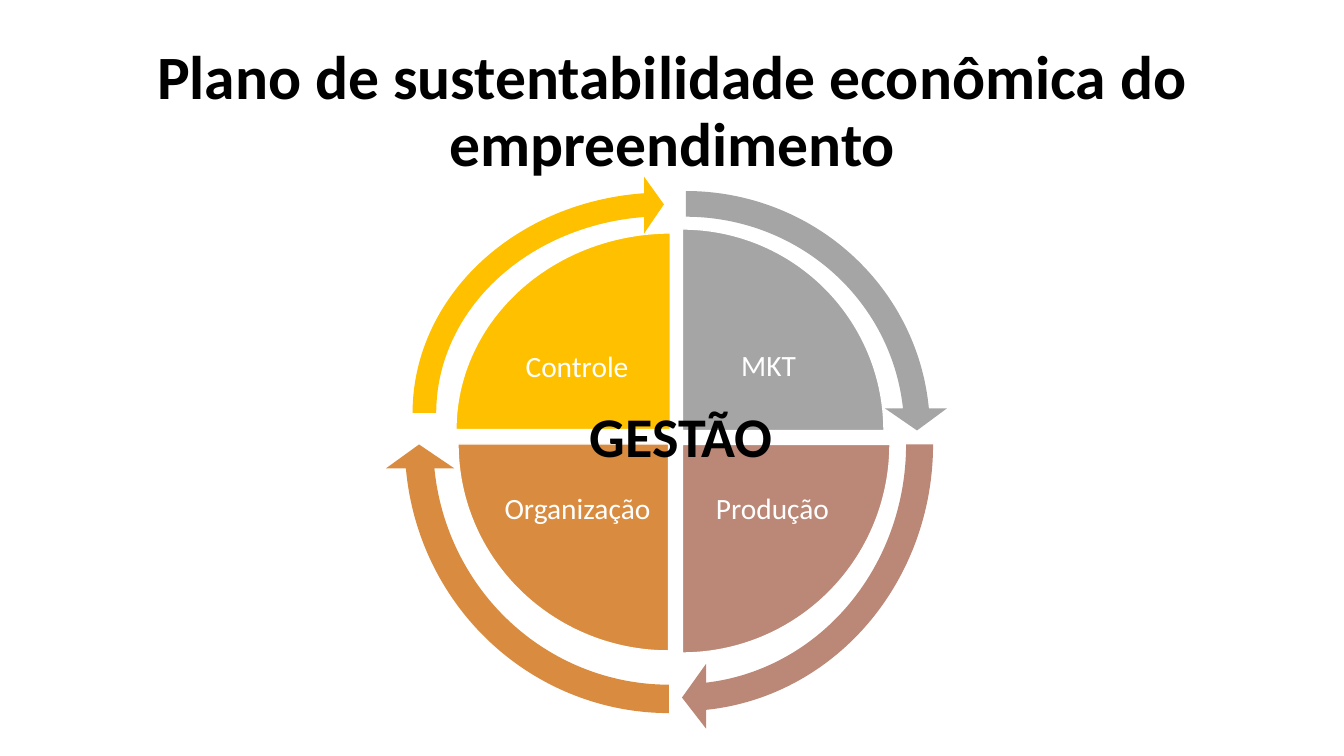
from pptx import Presentation
from pptx.dml.color import RGBColor
from pptx.enum.shapes import MSO_SHAPE
from pptx.enum.text import MSO_ANCHOR, PP_ALIGN
from pptx.util import Pt

PX = 914400 / 100.8
BLACK = RGBColor(0x00, 0x00, 0x00)
WHITE = RGBColor(0xFF, 0xFF, 0xFF)
GRAY = RGBColor(0xA5, 0xA5, 0xA5)
ROSE = RGBColor(0xBB, 0x87, 0x76)
ORANGE = RGBColor(0xD9, 0x8C, 0x3F)
GOLD = RGBColor(0xFF, 0xC0, 0x00)
TURN = 216  # full circle in shape adjustment units
QUARTER = TURN // 4

deck = Presentation()
deck.slide_width, deck.slide_height = round(1344 * PX), round(756 * PX)
slide = deck.slides.add_slide(deck.slide_layouts[6])


def add_text(text, box, size, color, bold=False, align=PP_ALIGN.CENTER,
             anchor=MSO_ANCHOR.MIDDLE, spacing=0.9, inset=None):
    frame = slide.shapes.add_textbox(*[round(v * PX) for v in box]).text_frame
    frame.text = text
    frame.word_wrap = True
    frame.vertical_anchor = anchor
    if inset is not None:
        frame.margin_left = frame.margin_right = round(inset * PX)
        frame.margin_top = frame.margin_bottom = round(inset * PX)
    line = frame.paragraphs[0]
    line.alignment, line.line_spacing = align, spacing
    font = line.runs[0].font
    font.name, font.size, font.bold = "Calibri", Pt(size), bold
    font.color.rgb = color


def add_part(kind, box, color, angles):
    part = slide.shapes.add_shape(kind, *[round(v * PX) for v in box])
    part.shadow.inherit = False
    part.fill.solid()
    part.fill.fore_color.rgb = color
    for i, angle in enumerate(angles):
        part.adjustments[i] = angle
    return part


add_text("Plano de sustentabilidade econômica do empreendimento",
         (93, 40, 1159, 146), 44, BLACK, bold=True)

# Clockwise from the top: name, color, pie box, label box, arrow box
stages = [
    ("MKT", GRAY, (481, 229, 403, 403), (694, 312, 149, 110), (424, 173, 524, 515)),
    ("Produção", ROSE, (475, 236, 415, 417), (696, 453, 153, 114), (412, 159, 540, 571)),
    ("Organização", ORANGE, (458, 237, 421, 414), (500, 453, 155, 114), (385, 156, 568, 577)),
    ("Controle", GOLD, (456, 233, 429, 393), (498, 314, 158, 108), (396, 176, 536, 474)),
]
starts = [(3 + i) * QUARTER % TURN for i in range(len(stages))]

for start, (name, color, pie, label, _) in zip(starts, stages):
    wedge = add_part(MSO_SHAPE.PIE, pie, color, (start, (start + QUARTER) % TURN))
    wedge.line.color.rgb = WHITE
    wedge.line.width = Pt(1)
    add_text(name, label, 21, WHITE, inset=3)

for start, (_, color, _, _, box) in zip(starts, stages):
    arrow = add_part(MSO_SHAPE.CIRCULAR_ARROW, box, color,
                     (0.05, 3.28, start + 50.72, start, 0.06))
    arrow.line.fill.background()

add_text("GESTÃO", (580, 397, 206, 78), 40, BLACK, bold=True,
         align=PP_ALIGN.LEFT, anchor=MSO_ANCHOR.TOP, spacing=1.0)

deck.save("out.pptx")
